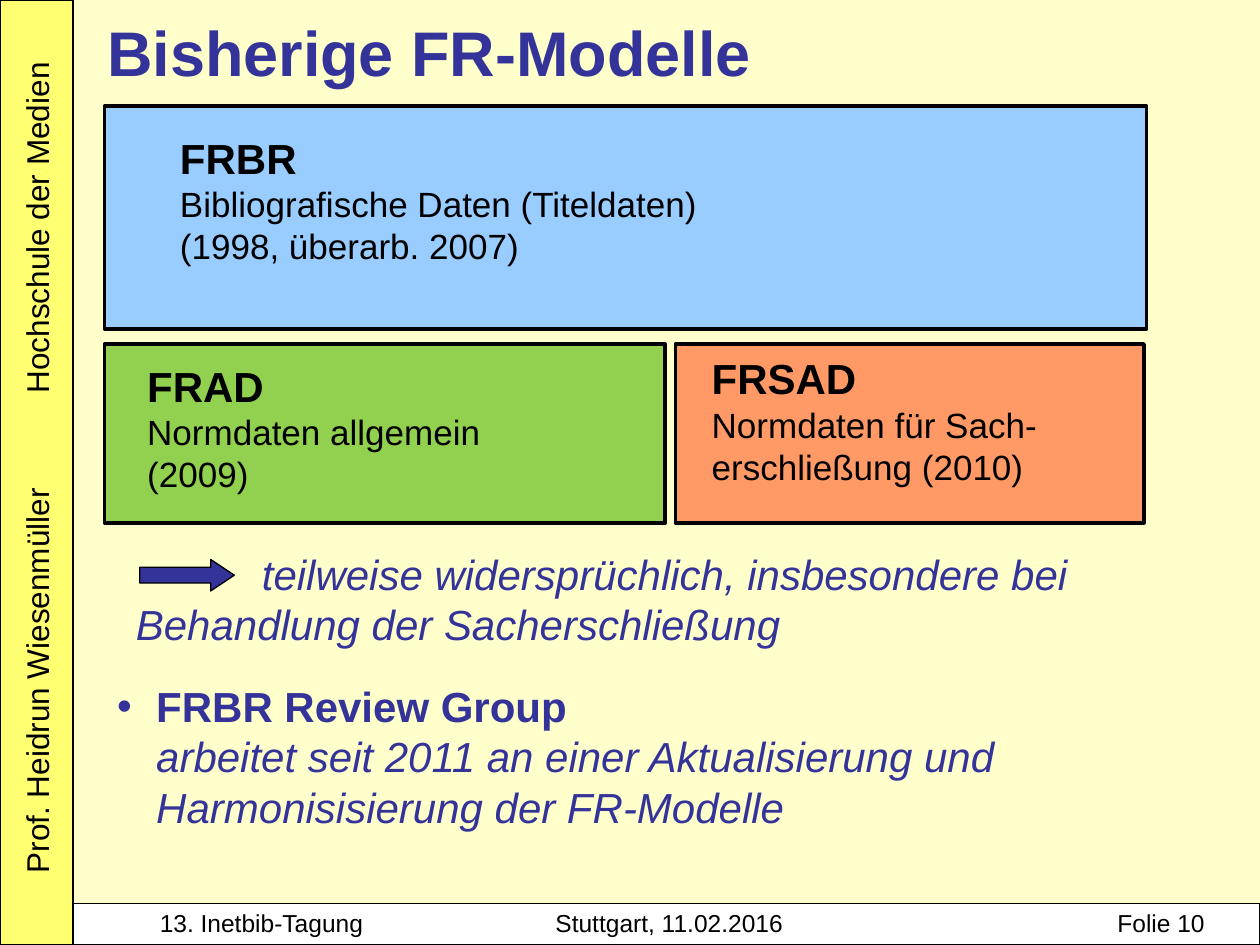
from dataclasses import dataclass

from lxml.etree import SubElement
from pptx import Presentation
from pptx.dml.color import RGBColor
from pptx.enum.shapes import MSO_SHAPE as Shape
from pptx.enum.text import MSO_ANCHOR, MSO_AUTO_SIZE, PP_ALIGN
from pptx.oxml.ns import qn
from pptx.util import Inches, Pt

COLORS = {
    "background": "FFFFCC", "band": "FFFF66", "white": "FFFFFF", "black": "000000",
    "accent": "333399", "blue": "99CCFF", "green": "92D050", "orange": "FF9966",
}


@dataclass
class Area:
    left: float
    top: float
    width: float
    height: float

    def lengths(self) -> list:
        return [Inches(n) for n in (self.left, self.top, self.width, self.height)]


@dataclass
class Span:
    text: str
    size: float
    color: str = "black"
    bold: bool = False
    italic: bool = False
    break_after: bool = False


@dataclass
class Model:
    name: str
    lines: list[str]
    color: str
    frame: Area
    label: Area


MODELS = [
    Model("FRBR", ["Bibliografische Daten (Titeldaten)", "(1998, überarb. 2007)"],
          "blue", Area(0.83, 0.84, 8.27, 1.77), Area(1.33, 1, 7.02, 1.18)),
    Model("FRAD", ["Normdaten allgemein", "(2009)"],
          "green", Area(0.83, 2.73, 4.45, 1.42), Area(1.07, 2.81, 4.06, 1.18)),
    Model("FRSAD", ["Normdaten für Sach-erschließung (2010)"],
          "orange", Area(5.36, 2.73, 3.72, 1.42), Area(5.55, 2.75, 3.67, 1.18)),
]


def rgb(name: str) -> RGBColor:
    return RGBColor.from_string(COLORS[name])


def add_filled(shapes, kind, area: Area, color: str, line_width: float = 0.75):
    shape = shapes.add_shape(kind, *area.lengths())
    shape.shadow.inherit = False
    shape.fill.solid()
    shape.fill.fore_color.rgb = rgb(color)
    shape.line.color.rgb = rgb("black")
    shape.line.width = Pt(line_width)
    return shape


def write(frame, spans: list[Span]):
    """Fill the first paragraph of a text frame run by run and return it."""
    frame.word_wrap = True
    frame.auto_size = MSO_AUTO_SIZE.NONE
    frame.vertical_anchor = MSO_ANCHOR.TOP
    para = frame.paragraphs[0]
    para.alignment = PP_ALIGN.LEFT
    para.space_before = Pt(0)
    for span in spans:
        run = para.add_run()
        run.text = span.text
        font = run.font
        font.name, font.size = "Arial", Pt(span.size)
        font.bold, font.italic = span.bold, span.italic
        font.color.rgb = rgb(span.color)
        if span.break_after:
            para.add_line_break()
    return para


def add_text(shapes, area: Area, spans: list[Span]):
    box = shapes.add_textbox(*area.lengths())
    return box, write(box.text_frame, spans)


def fill_placeholder(holder, area: Area, spans: list[Span]):
    holder.left, holder.top, holder.width, holder.height = area.lengths()
    return write(holder.text_frame, spans)


def set_indent(para, margin: float, first_line: float) -> None:
    properties = para._p.get_or_add_pPr()
    properties.set("marL", str(Inches(margin)))
    properties.set("indent", str(Inches(first_line)))


def set_tabs(para, positions: list[float]) -> None:
    tabs = SubElement(para._p.get_or_add_pPr(), qn("a:tabLst"))
    for position in positions:
        SubElement(tabs, qn("a:tab"), pos=str(Inches(position)), algn="l")


def add_margins(shapes) -> None:
    """Draw the author band on the left and the footer strip."""
    band = add_filled(shapes, Shape.RECTANGLE, Area(0, 0, 0.58, 7.5), "band")
    fill_color = band.element.spPr.find(".//" + qn("a:srgbClr"))
    SubElement(fill_color, qn("a:alpha"), val="89000")
    add_filled(shapes, Shape.RECTANGLE, Area(0.58, 7.17, 9.42, 0.33), "white")

    author, para = add_text(shapes, Area(-3.07, 3.47, 6.72, 0.4),
                            [Span("Prof. Heidrun Wiesenmüller\tHochschule der Medien", 18)])
    author.rotation = 270
    set_tabs(para, [3.81])
    _, para = add_text(shapes, Area(1.17, 7.16, 8.67, 0.34),
                       [Span("13. Inetbib-Tagung\tStuttgart, 11.02.2016\tFolie 10", 14)])
    set_tabs(para, [3.14, 7.6])


def add_model(shapes, model: Model) -> None:
    group = shapes.add_group_shape().shapes
    add_filled(group, Shape.RECTANGLE, model.frame, model.color, 2)
    spans = [Span(model.name, 24, bold=True, break_after=True)]
    spans += [Span(line, 20, break_after=line != model.lines[-1]) for line in model.lines]
    add_text(group, model.label, spans)


def add_conclusion(shapes) -> None:
    group = shapes.add_group_shape().shapes
    arrow = add_filled(group, Shape.RIGHT_ARROW, Area(1.11, 4.44, 0.75, 0.25), "accent")
    arrow.adjustments[0], arrow.adjustments[1] = 0.5, 0.75
    text = "teilweise widersprüchlich, insbesondere bei Behandlung der Sacherschließung"
    _, para = add_text(group, Area(0.67, 4.3, 8.98, 0.91),
                       [Span(text, 24, "accent", italic=True)])
    set_indent(para, 0.31, 1)


def main() -> None:
    deck = Presentation()
    deck.slide_width, deck.slide_height = Inches(10), Inches(7.5)
    page = deck.slides.add_slide(deck.slide_layouts[1])
    page.background.fill.solid()
    page.background.fill.fore_color.rgb = rgb("background")

    add_margins(page.shapes)
    for model in MODELS:
        add_model(page.shapes, model)
    add_conclusion(page.shapes)

    title = fill_placeholder(page.shapes.title, Area(0.75, -0.03, 9.49, 0.74),
                             [Span("Bisherige FR-Modelle", 36, "accent", bold=True)])
    title.line_spacing = 1.15
    review = fill_placeholder(page.placeholders[1], Area(0.83, 5.35, 9.06, 1.31), [
        Span("FRBR Review Group", 24, "accent", bold=True, break_after=True),
        Span("arbeitet seit 2011 an einer Aktualisierung und "
             "Harmonisisierung der FR-Modelle", 24, "accent", italic=True),
    ])
    set_indent(review, 0.31, -0.31)
    review.space_after = Pt(8)
    deck.save("out.pptx")


if __name__ == "__main__":
    main()
